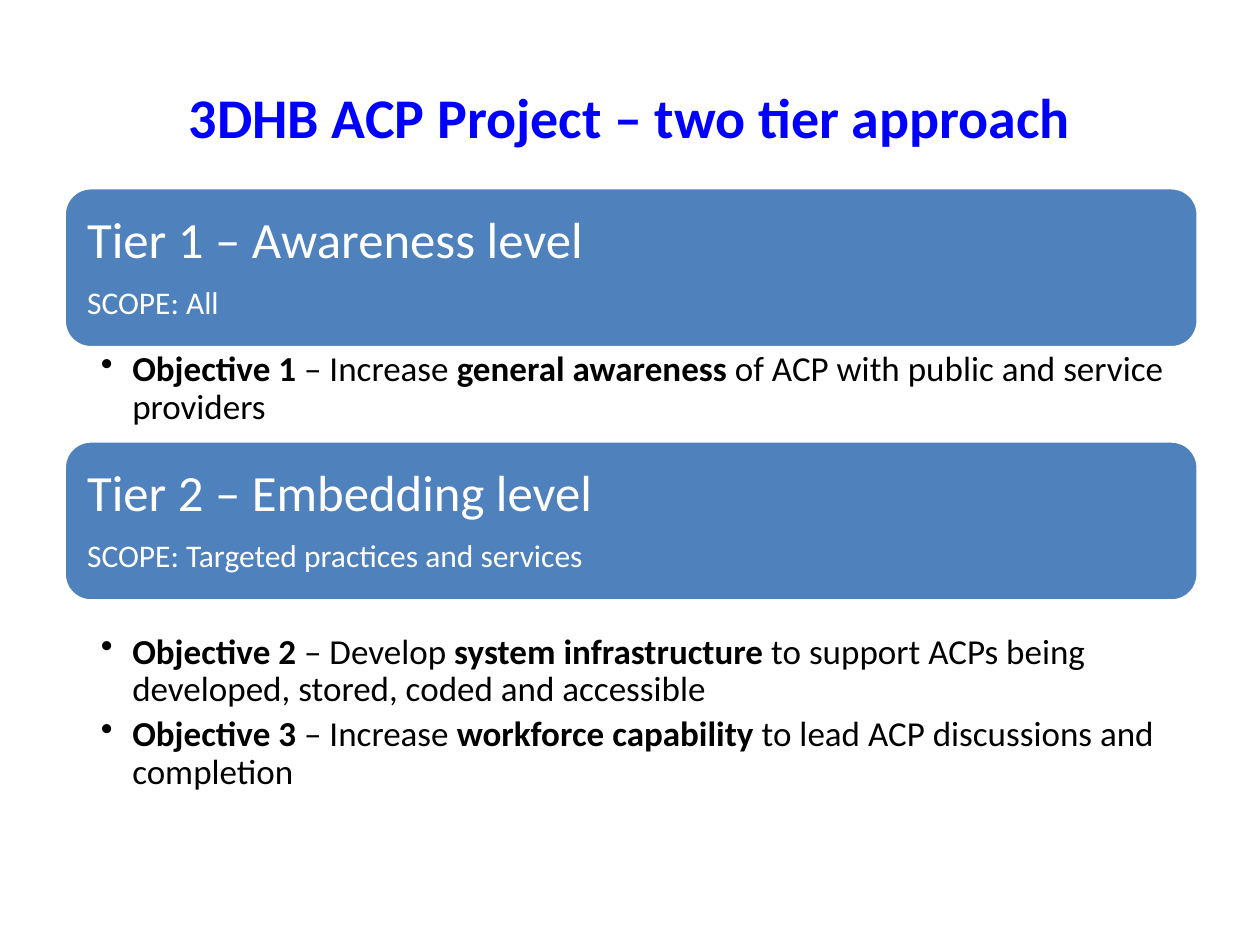
from dataclasses import dataclass

from lxml.etree import SubElement
from pptx import Presentation
from pptx.dml.color import RGBColor
from pptx.enum.shapes import MSO_SHAPE
from pptx.enum.text import MSO_ANCHOR, PP_ALIGN
from pptx.oxml.ns import qn
from pptx.slide import Slide
from pptx.util import Inches, Pt

FONT = "Calibri"
TITLE_BLUE = RGBColor(0x00, 0x00, 0xFF)
BANNER_BLUE = RGBColor(0x4F, 0x81, 0xBD)
WHITE = RGBColor(0xFF, 0xFF, 0xFF)
BLACK = RGBColor(0x00, 0x00, 0x00)

LEFT, WIDTH = Inches(0.51), Inches(9)
BANNER_HEIGHT = Inches(1.27)
LINE_SPACING = 0.9


@dataclass(frozen=True)
class Objective:
    label: str
    action: str
    focus: str
    detail: str


@dataclass(frozen=True)
class Tier:
    heading: str
    scope: str
    top: float
    objectives_top: float
    objectives_height: float
    objectives: tuple[Objective, ...]


TIERS = (
    Tier("Tier 1 – Awareness level", "SCOPE: All", 1.49, 2.76, 1.12, (
        Objective("Objective 1", " – Increase ", "general awareness ",
                  "of ACP with public and service providers"),
    )),
    Tier("Tier 2 – Embedding level", "SCOPE: Targeted practices and services",
         3.5, 5, 1.65, (
             Objective("Objective 2", " – Develop ", "system infrastructure ",
                       "to support ACPs being developed, stored, coded and accessible"),
             Objective("Objective 3", " – Increase ", "workforce capability ",
                       "to lead ACP discussions and completion"),
         )),
)


def add_run(paragraph, text: str, size: float, color: RGBColor, bold: bool = False) -> None:
    run = paragraph.add_run()
    run.text = text
    run.font.name = FONT
    run.font.size = Pt(size)
    run.font.bold = bold
    run.font.color.rgb = color


def next_paragraph(frame, index: int, space_after: float):
    """Return the first paragraph of the frame or a new one, with its spacing set."""
    paragraph = frame.paragraphs[0] if index == 0 else frame.add_paragraph()
    paragraph.alignment = PP_ALIGN.LEFT
    paragraph.line_spacing = LINE_SPACING
    paragraph.space_after = Pt(space_after)
    return paragraph


def set_margins(frame, left: float, right: float, vertical: float) -> None:
    frame.word_wrap = True
    frame.margin_left, frame.margin_right = Inches(left), Inches(right)
    frame.margin_top = frame.margin_bottom = Inches(vertical)


def add_bullet(paragraph) -> None:
    properties = paragraph._p.get_or_add_pPr()
    properties.set("marL", str(Inches(0.25)))
    properties.set("indent", str(-Inches(0.25)))
    SubElement(properties, qn("a:buChar")).set("char", "•")


def add_title(slide: Slide, text: str) -> None:
    box = slide.shapes.add_textbox(Inches(0.5), Inches(0.3), WIDTH, Inches(1.25))
    frame = box.text_frame
    frame.word_wrap = True
    frame.vertical_anchor = MSO_ANCHOR.MIDDLE
    paragraph = frame.paragraphs[0]
    paragraph.alignment = PP_ALIGN.CENTER
    add_run(paragraph, text, 32, TITLE_BLUE, bold=True)


def add_banner(slide: Slide, tier: Tier) -> None:
    banner = slide.shapes.add_shape(
        MSO_SHAPE.ROUNDED_RECTANGLE, LEFT, Inches(tier.top), WIDTH, BANNER_HEIGHT)
    banner.shadow.inherit = False
    banner.fill.solid()
    banner.fill.fore_color.rgb = BANNER_BLUE
    banner.line.color.rgb = WHITE
    banner.line.width = Pt(2)
    frame = banner.text_frame
    set_margins(frame, 0.12, 0.12, 0.12)
    frame.vertical_anchor = MSO_ANCHOR.MIDDLE
    for index, (text, size) in enumerate(((tier.heading, 29), (tier.scope, 18))):
        add_run(next_paragraph(frame, index, size * 0.35), text, size, WHITE)


def add_objectives(slide: Slide, tier: Tier) -> None:
    box = slide.shapes.add_textbox(
        LEFT, Inches(tier.objectives_top), WIDTH, Inches(tier.objectives_height))
    frame = box.text_frame
    set_margins(frame, 0.29, 0.16, 0.03)
    for index, objective in enumerate(tier.objectives):
        paragraph = next_paragraph(frame, index, 4)
        paragraph.level = 1
        add_bullet(paragraph)
        add_run(paragraph, objective.label, 20, BLACK, bold=True)
        add_run(paragraph, objective.action, 20, BLACK)
        add_run(paragraph, objective.focus, 20, BLACK, bold=True)
        add_run(paragraph, objective.detail, 20, BLACK)


def main() -> None:
    presentation = Presentation()
    presentation.slide_width, presentation.slide_height = Inches(10), Inches(7.5)
    slide = presentation.slides.add_slide(presentation.slide_layouts[6])
    add_title(slide, "3DHB ACP Project – two tier approach")
    for tier in TIERS:
        add_banner(slide, tier)
        add_objectives(slide, tier)
    presentation.save("out.pptx")


if __name__ == "__main__":
    main()
